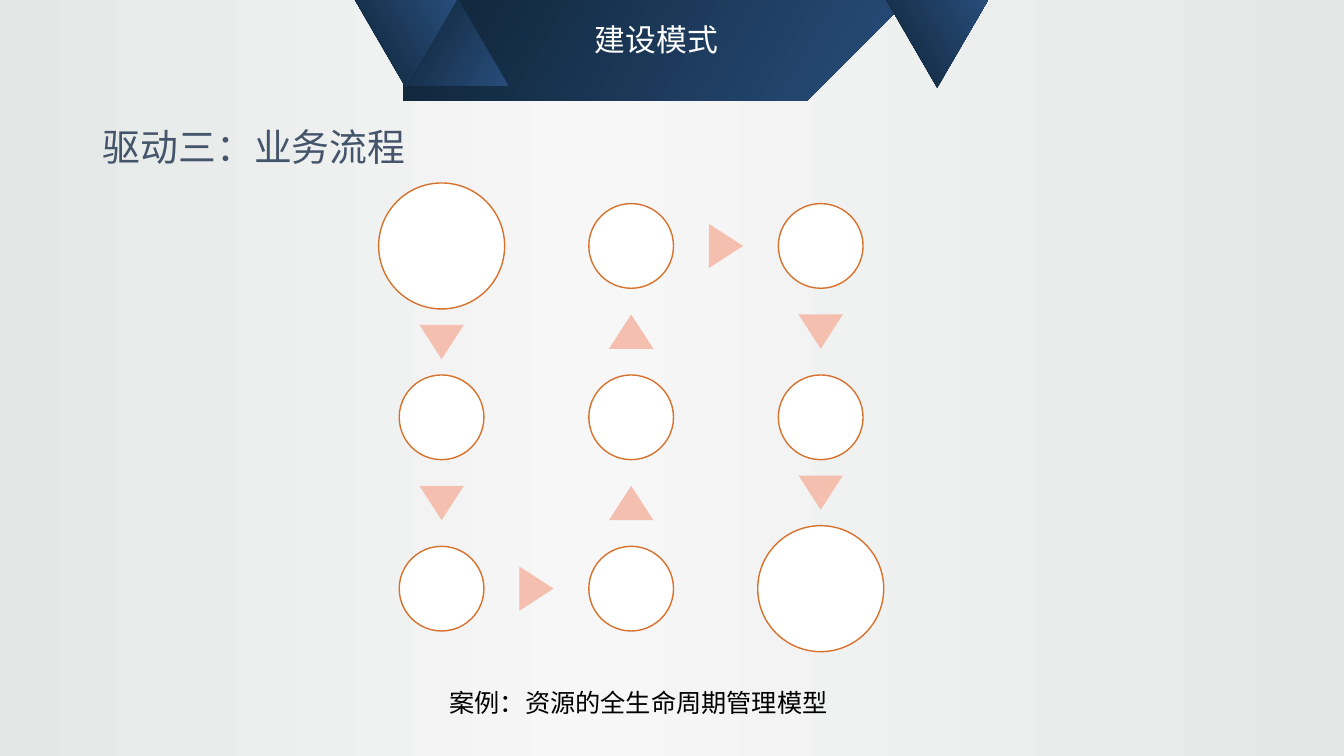
from copy import deepcopy
from dataclasses import dataclass
from itertools import pairwise

from lxml import etree
from pptx import Presentation
from pptx import util as u
from pptx.dml.color import RGBColor
from pptx.enum import shapes, text
from pptx.oxml.ns import qn


@dataclass(frozen=True)
class Theme:
    navy: tuple = ((0, "0F2437"), (1, "284D7A"))
    backdrop: tuple = ((0.01, "E3E7E5"), (0.56, "F7F7F7"), (1, "E3E7E5"))
    white: str = "FFFFFF"
    slate: str = "44546A"
    black: str = "000000"
    orange: str = "D7712C"
    peach: str = "F4BFAE"
    title_font: str = "Arial"
    body_font: str = "Noto Sans CJK SC"
    title_size: int = 22
    heading_size: int = 27
    caption_size: int = 18


THEME = Theme()
COLUMNS = [4.38 + 1.88 * column for column in range(3)]
ROWS = [2.44 + 1.7 * row for row in range(3)]
STAGE, END_STAGE = 0.84, 1.25
ARROW_WIDTH, ARROW_HEIGHT = 0.44, 0.34
ROUTE = [(0, 0), (0, 1), (0, 2), (1, 2), (1, 1), (1, 0), (2, 0), (2, 1), (2, 2)]
TURN = {(0, -1): 0, (1, 0): 90, (0, 1): 180}


def inches(*lengths):
    return [u.Inches(length) for length in lengths]


def paint_gradient(fill, element, stops, angle):
    fill.gradient()
    fill.gradient_angle = angle
    stop_list = next(element.iter(qn("a:gsLst")))
    for _ in stops[2:]:
        stop_list.append(deepcopy(stop_list[-1]))
    for stop, (position, color) in zip(fill.gradient_stops, stops):
        stop.position = position
        stop.color.rgb = RGBColor.from_string(color)


def paint_navy(part):
    part.shadow.inherit = False
    part.line.fill.background()
    paint_gradient(part.fill, part.element, THEME.navy, 330)


def write(box, words, *, size, color, font, margins=(0.1, 0.05), align=None,
          anchor=text.MSO_ANCHOR.TOP, spacing=None,
          fit=text.MSO_AUTO_SIZE.SHAPE_TO_FIT_TEXT):
    frame = box.text_frame
    frame.word_wrap = True
    frame.auto_size = fit
    frame.vertical_anchor = anchor
    frame.margin_left = frame.margin_right = u.Inches(margins[0])
    frame.margin_top = frame.margin_bottom = u.Inches(margins[1])
    paragraph = frame.paragraphs[0]
    paragraph.alignment = align
    paragraph.line_spacing = spacing
    run = paragraph.add_run()
    run.text = words
    run.font.size = u.Pt(size)
    run.font.name = font
    run.font.color.rgb = RGBColor.from_string(color)
    etree.SubElement(run.font._element, qn("a:ea"), typeface=font)


def add_banner(slide):
    outline = slide.shapes.build_freeform(4.42, 0, scale=u.Inches(1))
    outline.add_line_segments([(8.78, 0), (8.28, 0.86), (4.42, 0.86)])
    paint_navy(outline.convert_to_shape())
    for left, top, flipped in ((4.03, -0.02, False), (3.52, 0, True), (8.79, 0, True)):
        facet = slide.shapes.add_shape(
            shapes.MSO_SHAPE.ISOSCELES_TRIANGLE, *inches(left, top, 1.01, 0.87))
        paint_navy(facet)
        if flipped:
            facet.element.spPr.find(qn("a:xfrm")).set("flipV", "1")


def add_title(slide, words):
    title = slide.shapes.title
    title.left, title.top, title.width, title.height = inches(4.74, 0.07, 3.54, 0.68)
    slide.shapes.element.append(title.element)
    write(title, words, size=THEME.title_size, color=THEME.white,
          font=THEME.title_font, align=text.PP_ALIGN.CENTER,
          anchor=text.MSO_ANCHOR.MIDDLE, spacing=0.9, fit=text.MSO_AUTO_SIZE.NONE)


def add_centered(canvas, kind, x, y, width, height, color):
    part = canvas.shapes.add_shape(
        kind, *inches(x - width / 2, y - height / 2, width, height))
    part.shadow.inherit = False
    part.fill.solid()
    part.fill.fore_color.rgb = RGBColor.from_string(color)
    part.line.fill.background()
    return part


def diameter(stop):
    return END_STAGE if stop in (ROUTE[0], ROUTE[-1]) else STAGE


def add_stage(canvas, stop):
    column, row = stop
    size = diameter(stop)
    stage = add_centered(canvas, shapes.MSO_SHAPE.OVAL, COLUMNS[column], ROWS[row],
                         size, size, THEME.white)
    stage.line.color.rgb = RGBColor.from_string(THEME.orange)
    stage.line.width = u.Pt(1)


def add_arrow(canvas, origin, target):
    dx, dy = target[0] - origin[0], target[1] - origin[1]
    shift = (diameter(origin) - diameter(target)) / 4
    x = (COLUMNS[origin[0]] + COLUMNS[target[0]]) / 2 + dx * shift
    y = (ROWS[origin[1]] + ROWS[target[1]]) / 2 + dy * shift
    arrow = add_centered(canvas, shapes.MSO_SHAPE.ISOSCELES_TRIANGLE, x, y,
                         ARROW_WIDTH, ARROW_HEIGHT, THEME.peach)
    arrow.rotation = TURN[dx, dy]


def add_process(slide):
    process = slide.shapes.add_group_shape()
    add_stage(process, ROUTE[0])
    for origin, target in pairwise(ROUTE):
        add_arrow(process, origin, target)
        add_stage(process, target)


def main():
    deck = Presentation()
    deck.slide_width, deck.slide_height = inches(13.33, 7.5)
    slide = deck.slides.add_slide(deck.slide_layouts[5])
    paint_gradient(slide.background.fill, slide.element, THEME.backdrop, 180)
    add_banner(slide)
    add_title(slide, "建设模式")
    heading = slide.shapes.add_textbox(*inches(0.97, 1.21, 9.45, 0.5))
    write(heading, "驱动三：业务流程", size=THEME.heading_size, color=THEME.slate,
          font=THEME.body_font, margins=(0.05, 0.02))
    add_process(slide)
    caption = slide.shapes.add_textbox(*inches(4.36, 6.77, 4.04, 0.4))
    write(caption, "案例：资源的全生命周期管理模型", size=THEME.caption_size,
          color=THEME.black, font=THEME.body_font)
    deck.save("out.pptx")


if __name__ == "__main__":
    main()
